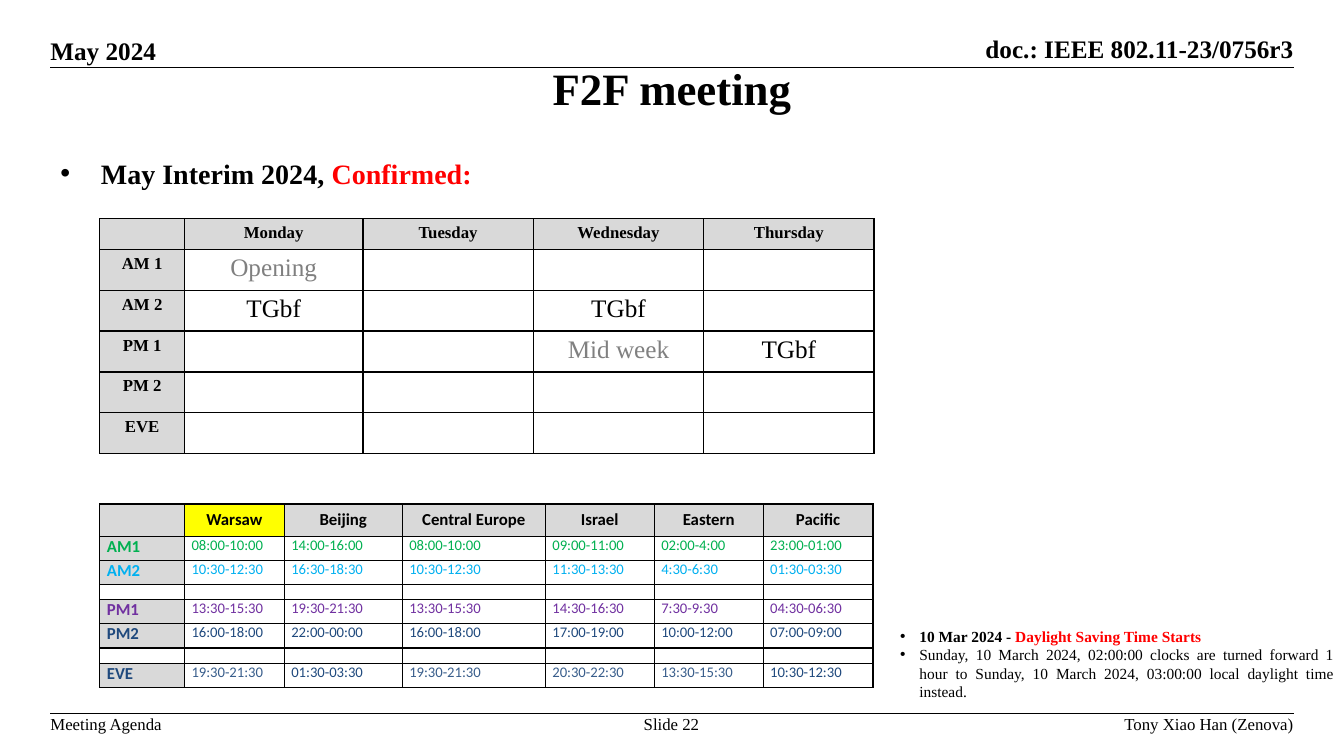
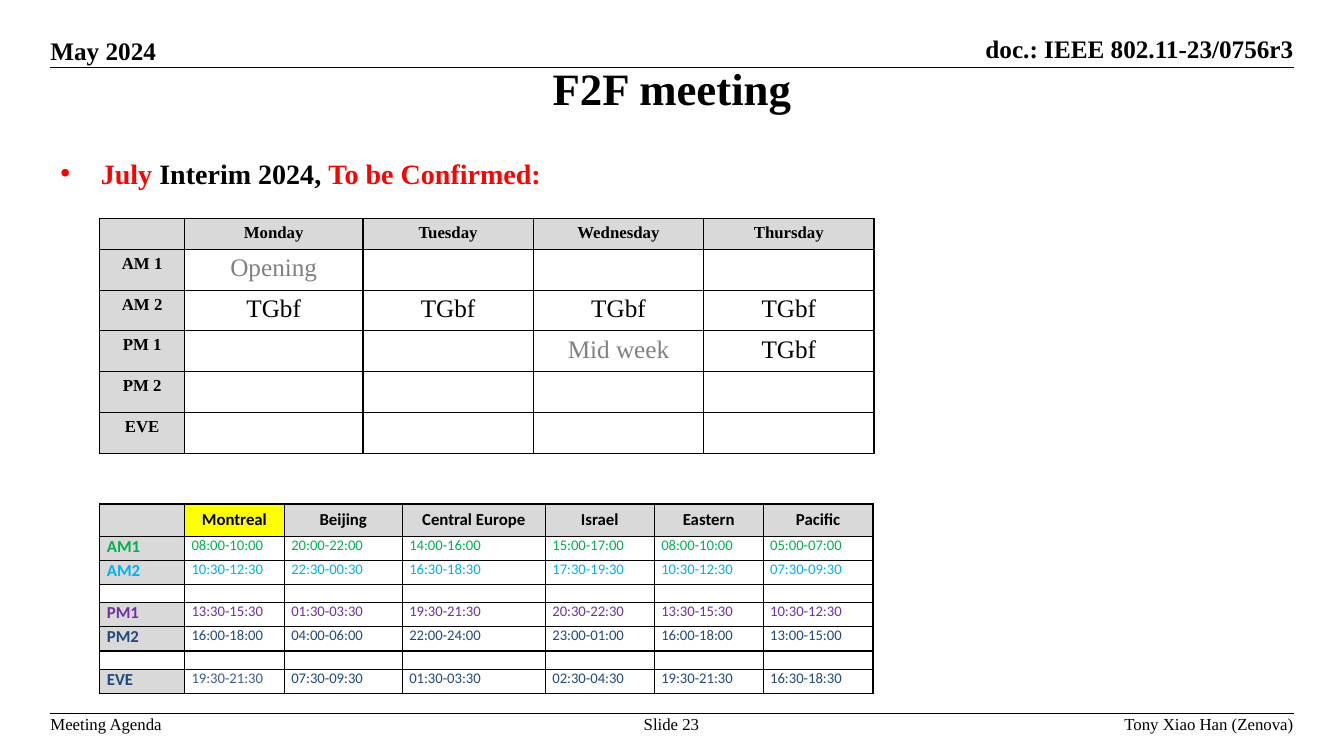
"""Build the two F2F meeting slides with their schedule and time zone tables."""
from lxml.etree import SubElement
from pptx import Presentation
from pptx.dml.color import RGBColor
from pptx.enum.shapes import MSO_CONNECTOR, MSO_SHAPE
from pptx.enum.text import MSO_ANCHOR, MSO_AUTO_SIZE, PP_ALIGN
from pptx.oxml.ns import qn
from pptx.util import Inches, Pt

BLACK = RGBColor(0x00, 0x00, 0x00)
WHITE = RGBColor(0xFF, 0xFF, 0xFF)
RED = RGBColor(0xFF, 0x00, 0x00)
YELLOW = RGBColor(0xFF, 0xFF, 0x00)
GREY = RGBColor(0x80, 0x80, 0x80)
LIGHT_GREY = RGBColor(0xD9, 0xD9, 0xD9)
GREEN = RGBColor(0x00, 0xB0, 0x50)
SKY = RGBColor(0x00, 0xB0, 0xF0)
PURPLE = RGBColor(0x70, 0x30, 0xA0)
NAVY = RGBColor(0x1F, 0x49, 0x7D)
STEEL = RGBColor(0x38, 0x5D, 0x8B)
SERIF, SANS = "Times New Roman", "Calibri"

LEFT, RIGHT = 0.5, 12.83
RULE_TOPS = (0.67, 7.08)
HEADER = {"size": 18, "bold": True, "anchor": MSO_ANCHOR.BOTTOM}
FOOTER = {"size": 12, "bold": False, "anchor": MSO_ANCHOR.TOP}
BANDS = [
    ("May 2024", (LEFT, 0.35, 4, 0.3), PP_ALIGN.LEFT, HEADER),
    ("doc.: IEEE 802.11-23/0756r3", (RIGHT - 4, 0.33, 4, 0.3), PP_ALIGN.RIGHT, HEADER),
    ("Meeting Agenda", (LEFT, 7.08, 4, 0.2), PP_ALIGN.LEFT, FOOTER),
    ("Slide {number}", (4.66, 7.08, 4, 0.2), PP_ALIGN.CENTER, FOOTER),
    ("Tony Xiao Han (Zenova)", (RIGHT - 4, 7.08, 4, 0.2), PP_ALIGN.RIGHT, FOOTER),
]

TITLE = "F2F meeting"
DAYS = ["", "Monday", "Tuesday", "Wednesday", "Thursday"]
SESSIONS = ["AM 1", "AM 2", "PM 1", "PM 2", "EVE"]
SCHEDULE_COLUMNS = [0.84, 1.77, 1.69, 1.69, 1.69]
SCHEDULE_ROWS = [0.3] + [0.4] * len(SESSIONS)
ZONES = ["Beijing", "Central Europe", "Israel", "Eastern", "Pacific"]
ZONE_COLUMNS = [0.84, 0.99, 1.17, 1.42, 1.08, 1.08, 1.09]
SLOT_COLORS = {"AM1": GREEN, "AM2": SKY, "PM1": PURPLE, "PM2": NAVY, "EVE": NAVY}

MEETINGS = [
    {
        "number": 22,
        "heading": [("May Interim 2024, ", BLACK), ("Confirmed:", RED)],
        "agenda": {
            ("AM 1", "Monday"): "Opening",
            ("AM 2", "Monday"): "TGbf",
            ("AM 2", "Wednesday"): "TGbf",
            ("PM 1", "Wednesday"): "Mid week",
            ("PM 1", "Thursday"): "TGbf",
        },
        "host": "Warsaw",
        "gap": 0.15,
        "steel_columns": (1, 3, 4, 5),
        "times": [
            ["AM1", "08:00-10:00", "14:00-16:00", "08:00-10:00", "09:00-11:00", "02:00-4:00", "23:00-01:00"],
            ["AM2", "10:30-12:30", "16:30-18:30", "10:30-12:30", "11:30-13:30", "4:30-6:30", "01:30-03:30"],
            [""] * 7,
            ["PM1", "13:30-15:30", "19:30-21:30", "13:30-15:30", "14:30-16:30", "7:30-9:30", "04:30-06:30"],
            ["PM2", "16:00-18:00", "22:00-00:00", "16:00-18:00", "17:00-19:00", "10:00-12:00", "07:00-09:00"],
            [""] * 7,
            ["EVE", "19:30-21:30", "01:30-03:30", "19:30-21:30", "20:30-22:30", "13:30-15:30", "10:30-12:30"],
        ],
        "note": [
            [("10 Mar 2024 - ", BLACK, True), ("Daylight Saving Time Starts", RED, True)],
            [("Sunday, 10 March 2024, 02:00:00 clocks are turned forward 1 hour to "
              "Sunday, 10 March 2024, 03:00:00 local daylight time instead.", BLACK, False)],
        ],
    },
    {
        "number": 23,
        "heading": [("July", RED), (" Interim 2024, ", BLACK), ("To be Confirmed:", RED)],
        "agenda": {
            ("AM 1", "Monday"): "Opening",
            **{("AM 2", day): "TGbf" for day in DAYS[1:]},
            ("PM 1", "Wednesday"): "Mid week",
            ("PM 1", "Thursday"): "TGbf",
        },
        "host": "Montreal",
        "gap": 0.18,
        "steel_columns": (1,),
        "times": [
            ["AM1", "08:00-10:00", "20:00-22:00", "14:00-16:00", "15:00-17:00", "08:00-10:00", "05:00-07:00"],
            ["AM2", "10:30-12:30", "22:30-00:30", "16:30-18:30", "17:30-19:30", "10:30-12:30", "07:30-09:30"],
            [""] * 7,
            ["PM1", "13:30-15:30", "01:30-03:30", "19:30-21:30", "20:30-22:30", "13:30-15:30", "10:30-12:30"],
            ["PM2", "16:00-18:00", "04:00-06:00", "22:00-24:00", "23:00-01:00", "16:00-18:00", "13:00-15:00"],
            [""] * 7,
            ["EVE", "19:30-21:30", "07:30-09:30", "01:30-03:30", "02:30-04:30", "19:30-21:30", "16:30-18:30"],
        ],
        "note": [],
    },
]


def box(*lengths):
    return [Inches(length) for length in lengths]


def write(paragraph, text, size, color=BLACK, bold=False, font=SERIF):
    run = paragraph.add_run()
    run.text = text
    run.font.color.rgb = color
    for key, value in {"size": Pt(size), "bold": bold, "name": font}.items():
        setattr(run.font, key, value)


def set_frame(frame, anchor, margins=(0.1, 0.05)):
    side, edge = box(*margins)
    values = {
        "word_wrap": True, "auto_size": MSO_AUTO_SIZE.NONE, "vertical_anchor": anchor,
        "margin_left": side, "margin_right": side, "margin_top": edge, "margin_bottom": edge,
    }
    for key, value in values.items():
        setattr(frame, key, value)


def add_bullet(paragraph, indent):
    properties = paragraph._p.get_or_add_pPr()
    properties.set("marL", str(Inches(indent)))
    properties.set("indent", str(-Inches(indent)))
    SubElement(properties, qn("a:buFont"), typeface="Arial")
    SubElement(properties, qn("a:buChar"), char="•")


def place(placeholder, position):
    for key, value in zip(("left", "top", "width", "height"), box(*position)):
        setattr(placeholder, key, value)


def add_bands(slide, number):
    for top in RULE_TOPS:
        rule = slide.shapes.add_connector(MSO_CONNECTOR.STRAIGHT, *box(LEFT, top, RIGHT, top))
        rule.line.color.rgb = BLACK
        rule.line.width = Pt(1)
        SubElement(rule._element.spPr, qn("a:effectLst"))
    for text, position, alignment, style in BANDS:
        frame = slide.shapes.add_textbox(*box(*position)).text_frame
        set_frame(frame, style["anchor"], (0, 0))
        frame.paragraphs[0].alignment = alignment
        write(frame.paragraphs[0], text.format(number=number), style["size"], bold=style["bold"])


def add_headings(slide, heading):
    title, body = slide.shapes.title, slide.placeholders[1]
    place(title, (0, 0.58, 13.33, 0.58))
    set_frame(title.text_frame, MSO_ANCHOR.MIDDLE)
    title.text_frame.paragraphs[0].alignment = PP_ALIGN.CENTER
    write(title.text_frame.paragraphs[0], TITLE, 32, bold=True)
    place(body, (0.5, 1.5, 7.17, 0.6))
    set_frame(body.text_frame, MSO_ANCHOR.TOP)
    line = body.text_frame.paragraphs[0]
    add_bullet(line, 0.4)
    for text, color in heading:
        write(line, text, 20, color, True)


def add_grid(slide, top, columns, rows):
    frame = slide.shapes.add_table(
        len(rows), len(columns), *box(0.99, top, sum(columns), sum(rows)))
    grid = frame.table
    grid.first_row = grid.horz_banding = False
    for column, width in zip(grid.columns, columns):
        column.width = Inches(width)
    for row, height in zip(grid.rows, rows):
        row.height = Inches(height)
    return grid


def fill_cell(cell, text, size, fill=None, alignment=PP_ALIGN.LEFT, margins=(0.1, 0.05),
              anchor=MSO_ANCHOR.TOP, **style):
    properties = cell._tc.get_or_add_tcPr()
    for side in "LRTB":
        border = SubElement(properties, qn(f"a:ln{side}"), w=str(Pt(1)))
        SubElement(SubElement(border, qn("a:solidFill")), qn("a:srgbClr"), val=str(BLACK))
    if fill is None:
        cell.fill.background()
    else:
        cell.fill.solid()
        cell.fill.fore_color.rgb = fill
    cell.margin_left = cell.margin_right = Inches(margins[0])
    cell.margin_top = cell.margin_bottom = Inches(margins[1])
    cell.vertical_anchor = anchor
    paragraph = cell.text_frame.paragraphs[0]
    paragraph.alignment = alignment
    if text:
        write(paragraph, text, size, **style)
    else:
        SubElement(paragraph._p, qn("a:endParaRPr"), sz=str(int(size * 100)))


def add_schedule(slide, agenda):
    grid = add_grid(slide, 2.17, SCHEDULE_COLUMNS, SCHEDULE_ROWS)
    for r, session in enumerate([""] + SESSIONS):
        for c, day in enumerate(DAYS):
            if r == 0 or c == 0:
                text = day or session
                style = {"size": 12, "bold": True, "fill": LIGHT_GREY}
            else:
                text = agenda.get((session, day), "")
                style = {"size": 18, "color": BLACK if text == "TGbf" else GREY}
            fill_cell(grid.cell(r, c), text, alignment=PP_ALIGN.CENTER, **style)


def add_time_zones(slide, meeting):
    times = meeting["times"]
    heights = [0.32] + [0.24 if row[0] else meeting["gap"] for row in times]
    grid = add_grid(slide, 5, ZONE_COLUMNS, heights)
    shared = {"font": SANS, "margins": (0.07, 0)}
    for c, zone in enumerate(["", meeting["host"]] + ZONES):
        fill_cell(grid.cell(0, c), zone, 12, YELLOW if c == 1 else LIGHT_GREY,
                  PP_ALIGN.CENTER, anchor=MSO_ANCHOR.MIDDLE, bold=True, **shared)
    for r, row in enumerate(times, 1):
        slot = row[0]
        for c, text in enumerate(row):
            color = SLOT_COLORS.get(slot, BLACK)
            if slot == "EVE" and c in meeting["steel_columns"]:
                color = STEEL
            if not slot:
                style = {"size": 8}
            elif c == 0:
                style = {"size": 12, "bold": True, "fill": LIGHT_GREY}
            else:
                style = {"size": 10.5}
            fill_cell(grid.cell(r, c), text, color=color, **style, **shared)


def add_note(slide, note):
    panel = slide.shapes.add_shape(MSO_SHAPE.RECTANGLE, *box(8.83, 6.17, 4.5, 0.85))
    panel.shadow.inherit = False
    panel.fill.solid()
    panel.fill.fore_color.rgb = WHITE
    panel.line.fill.background()
    frame = panel.text_frame
    set_frame(frame, MSO_ANCHOR.TOP)
    for i, runs in enumerate(note):
        paragraph = frame.add_paragraph() if i else frame.paragraphs[0]
        paragraph.alignment = PP_ALIGN.JUSTIFY
        add_bullet(paragraph, 0.19)
        for text, color, bold in runs:
            write(paragraph, text, 11, color, bold)


def main():
    deck = Presentation()
    deck.slide_width, deck.slide_height = box(13.33, 7.5)
    for meeting in MEETINGS:
        slide = deck.slides.add_slide(deck.slide_layouts[1])
        add_bands(slide, meeting["number"])
        add_headings(slide, meeting["heading"])
        add_schedule(slide, meeting["agenda"])
        add_time_zones(slide, meeting)
        if meeting["note"]:
            add_note(slide, meeting["note"])
    deck.save("out.pptx")


if __name__ == "__main__":
    main()
